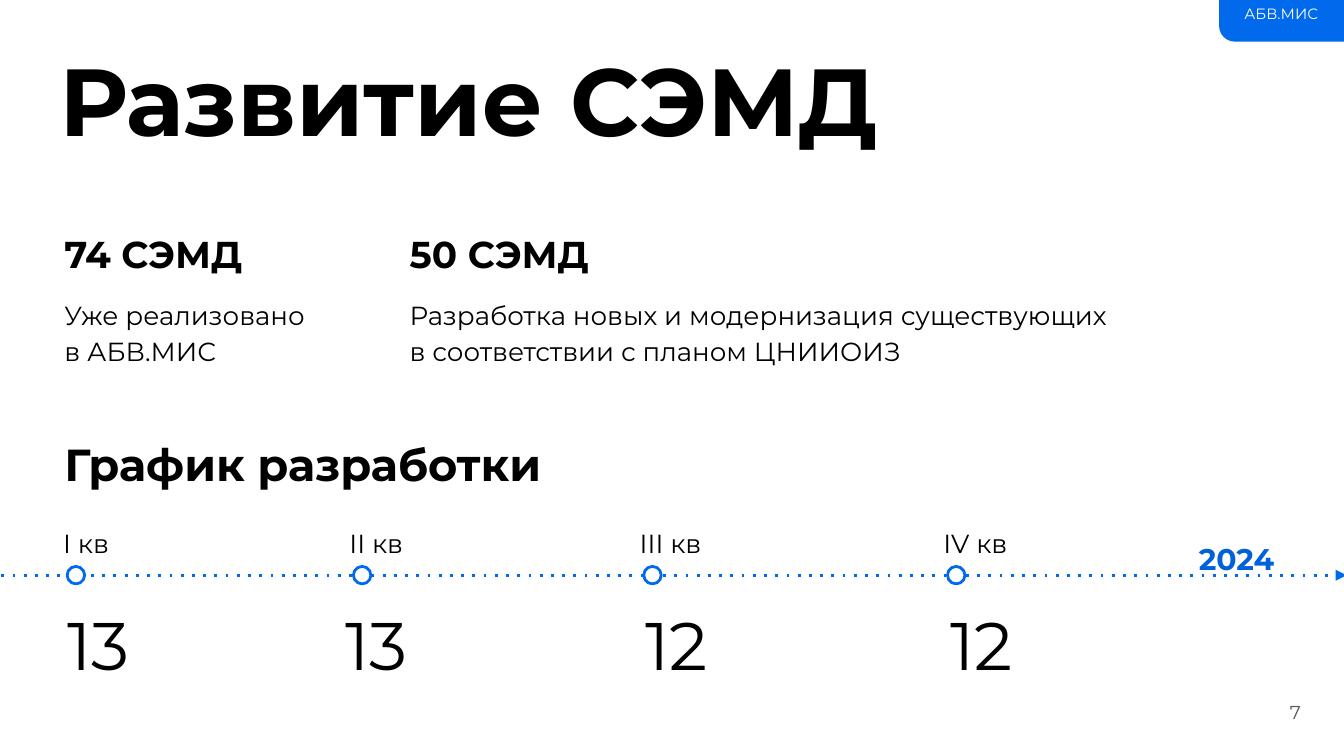
from lxml import etree
from pptx import Presentation
from pptx.dml.color import RGBColor
from pptx.enum.shapes import MSO_CONNECTOR, MSO_SHAPE
from pptx.enum.text import MSO_ANCHOR
from pptx.oxml.ns import qn
from pptx.util import Inches, Pt

LINE = MSO_CONNECTOR.STRAIGHT
DOT, TAB = MSO_SHAPE.OVAL, MSO_SHAPE.ROUND_1_RECTANGLE
TOP, MID = MSO_ANCHOR.TOP, MSO_ANCHOR.MIDDLE

WIDE = 10
HIGH = WIDE * 9 / 16
HUES = {"ink": "000000", "paper": "FFFFFF", "blue": "0169EC",
        "tab": "0069EC", "year": "0061DA", "page": "595959"}
FACE = "Montserrat"

TITLE = "Развитие СЭМД"
BRAND = "АБВ.МИС"
PLAN = "График разработки"
YEAR, PAGE = "2024", "7"
FACTS = [
    (0.38, 2.12, "74 СЭМД", ["Уже реализовано", "в АБВ.МИС"]),
    (2.95, 5.61, "50 СЭМД", ["Разработка новых и модернизация существующих",
                             "в соответствии с планом ЦНИИОИЗ"]),
]
STEPS = [
    (0.5, "I кв", 0.43, "13"),
    (2.63, "II кв", 2.5, "13"),
    (4.79, "III кв", 4.73, "12"),
    (7.05, "IV кв", 7, "12"),
]

LEFT, AXIS, SIZE = 0.38, 4.28, 0.13
WIDE_PAD, SLIM_PAD, HEAD_PAD = (0.1, 0.1), (0.07, 0.04), (0.06, 0.03)

FORMS = {
    "title": {"size": 51, "bold": True, "pad": HEAD_PAD, "anchor": MID},
    "head": {"size": 24, "bold": True},
    "fact": {"size": 20, "bold": True},
    "body": {"size": 14, "lead": 1.15},
    "step": {"size": 14, "lead": 1.15, "pad": SLIM_PAD},
    "count": {"size": 36, "pad": SLIM_PAD},
    "year": {"size": 16, "bold": True, "hue": "year", "lead": 1.15, "pad": SLIM_PAD},
    "brand": {"size": 8, "hue": "paper", "lead": 0.9},
    "page": {"size": 10, "hue": "page"},
}

deck = Presentation()
deck.slide_width, deck.slide_height = Inches(WIDE), Inches(HIGH)
slide = deck.slides.add_slide(deck.slide_layouts[6])
shapes = slide.shapes


def tint(name):
    return RGBColor.from_string(HUES[name])


def write(rows, kind, *area):
    form = FORMS[kind]
    frame = shapes.add_textbox(*map(Inches, area)).text_frame
    across, down = map(Inches, form.get("pad", WIDE_PAD))
    setup = {"word_wrap": True, "vertical_anchor": form.get("anchor", TOP),
             "margin_left": across, "margin_right": across,
             "margin_top": down, "margin_bottom": down}
    for key, value in setup.items():
        setattr(frame, key, value)
    style = {"name": FACE, "size": Pt(form["size"]), "bold": form.get("bold", False)}
    for i, row in enumerate(rows):
        para = frame.add_paragraph() if i else frame.paragraphs[0]
        para.line_spacing = form.get("lead", 1.0)
        run = para.add_run()
        run.text = row
        for key, value in style.items():
            setattr(run.font, key, value)
        run.font.color.rgb = tint(form.get("hue", "ink"))


def draw(kind, fill, *area):
    shape = shapes.add_shape(kind, *map(Inches, area))
    shape.shadow.inherit = False
    shape.fill.solid()
    shape.fill.fore_color.rgb = tint(fill)
    return shape


write([TITLE], "title", LEFT, 0.24, 6.34, 0.98)
write([PAGE], "page", 9.5, 5.13, 0.44, 0.43)

axis = shapes.add_connector(LINE, *map(Inches, (0.01, AXIS, WIDE + 0.02, AXIS)))
axis.line.color.rgb = tint("blue")
axis.line.width = Pt(1.5)
edge = axis.line._get_or_add_ln()
etree.SubElement(edge, qn("a:prstDash"), val="dot")
etree.SubElement(edge, qn("a:tailEnd"), type="triangle")
etree.SubElement(axis._element.spPr, qn("a:effectLst"))

for x, name, left, count in STEPS:
    ring = draw(DOT, "paper", x, AXIS - SIZE / 2, SIZE, SIZE)
    ring.line.color.rgb = tint("blue")
    ring.line.width = Pt(1.5)
    write([name], "step", x - 0.1, 3.85, 0.74, 0.27)
    write([count], "count", left, 4.45, 0.85, 0.58)

write([YEAR], "year", 8.85, 3.94, 0.74, 0.27)
write([PLAN], "head", LEFT, 3.15, 3.92, 0.61)

for x, width, head, rows in FACTS:
    write([head], "fact", x, 1.62, 1.69, 0.54)
    write(rows, "body", x, 2.09, width, 0.73)

tab = draw(TAB, "tab", 9.07, 0, 0.93, 0.31)
tab.rotation = 180
tab.adjustments[0] = 0.38
tab.line.fill.background()
write([BRAND], "brand", 9.16, -0.01, 0.8, 0.32)

deck.save("out.pptx")
